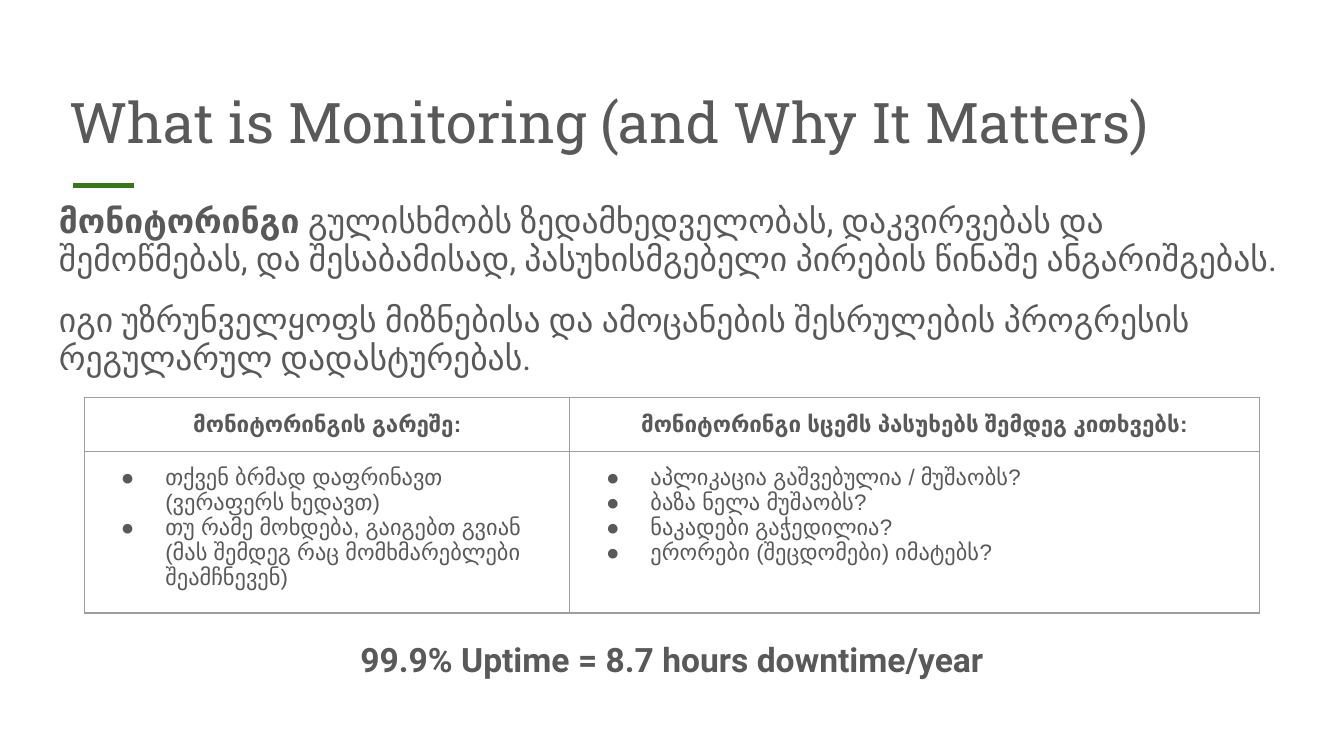
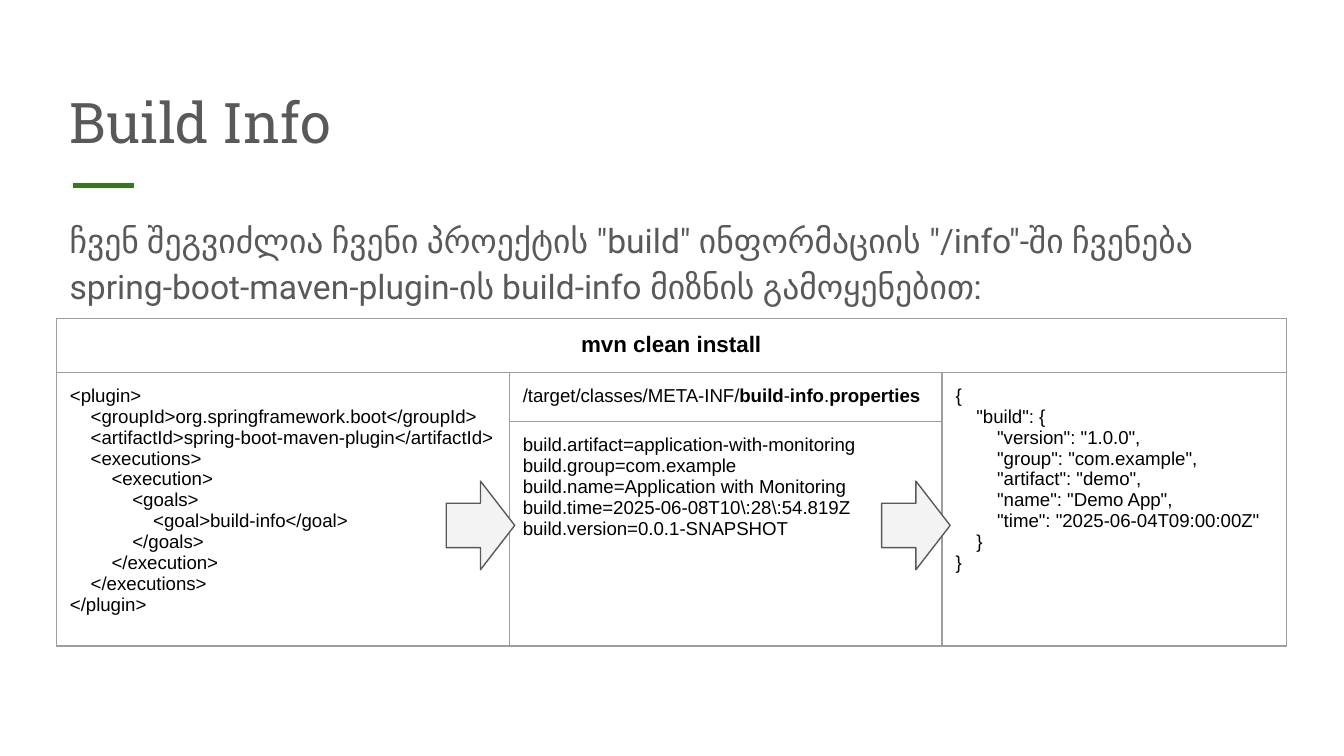
from lxml.etree import SubElement
from pptx import Presentation
from pptx.dml.color import RGBColor
from pptx.enum.shapes import MSO_CONNECTOR, MSO_SHAPE
from pptx.enum.text import MSO_ANCHOR, PP_ALIGN
from pptx.oxml.ns import qn
from pptx.util import Inches, Pt

# Shared look
GRAY, GREEN, BLACK = "595959", "38761D", "000000"
EDGE, PALE = "9E9E9E", "F3F3F3"
MID = PP_ALIGN.CENTER
rgb = RGBColor.from_string


def write(frame, text, font="Arial", size=12, color=GRAY, align=None,
          space=None, before=0, bullet=None, anchor=MSO_ANCHOR.TOP):
    """One paragraph per line; **bold** marks; leading spaces become an indent."""
    frame.word_wrap = True
    frame.vertical_anchor = anchor
    frame.margin_left = frame.margin_right = Inches(0.1)
    frame.margin_top = frame.margin_bottom = Inches(0.1)
    for i, line in enumerate(text.strip().split("\n")):
        par = frame.add_paragraph() if i else frame.paragraphs[0]
        par.alignment = align
        if space:
            par.line_spacing = space
        par.space_before = Pt(before if i else 0)
        props = par._p.get_or_add_pPr()
        body = line.lstrip()
        depth = (len(line) - len(body)) / 4
        if depth:
            props.set("marL", str(Inches(0.31 / 2 * depth)))
        if bullet:
            props.set("marL", str(Inches(0.5)))
            props.set("indent", str(Inches(-0.33)))
            tint = SubElement(props, qn("a:buClr"))
            SubElement(tint, qn("a:srgbClr"), val=color)
            SubElement(props, qn("a:buSzPts"), val=str(size * 100))
            SubElement(props, qn("a:buFont"), typeface=font)
            SubElement(props, qn("a:buChar"), char=bullet)
        for j, part in enumerate(body.split("**")):
            if part:
                run = par.add_run()
                run.text = part
                run.font.name, run.font.size = font, Pt(size)
                run.font.bold = j % 2 == 1
                run.font.color.rgb = rgb(color)


def grid(slide, left, top, cols, rows):
    """Plain table with thin gray borders on every cell."""
    frame = slide.shapes.add_table(len(rows), len(cols), Inches(left), Inches(top),
                                   Inches(sum(cols)), Inches(sum(rows)))
    table = frame.table
    table.first_row = table.horz_banding = False
    for col, width in zip(table.columns, cols):
        col.width = Inches(width)
    for row, height in zip(table.rows, rows):
        row.height = Inches(height)
    for cell in table.iter_cells():
        props = cell._tc.get_or_add_tcPr()
        for side in ("lnL", "lnR", "lnT", "lnB"):
            edge = SubElement(props, qn("a:" + side), w=str(Pt(0.75)))
            fill = SubElement(edge, qn("a:solidFill"))
            SubElement(fill, qn("a:srgbClr"), val=EDGE)
        cell.fill.background()
        cell.margin_left = cell.margin_right = Inches(0.1)
        cell.margin_top = cell.margin_bottom = Inches(0.1)
    return table


# A 16:9 deck
deck = Presentation()
deck.slide_width, deck.slide_height = Inches(10), Inches(10 * 9 / 16)

# Both slides: green rule, title, body text
INTRO = """
**მონიტორინგი** გულისხმობს ზედამხედველობას, დაკვირვებას და შემოწმებას, და შესაბამისად, პასუხისმგებელი პირების წინაშე ანგარიშგებას.
იგი უზრუნველყოფს მიზნებისა და ამოცანების შესრულების პროგრესის რეგულარულ დადასტურებას.
"""
BUILD = """
ჩვენ შეგვიძლია ჩვენი პროექტის "build" ინფორმაციის "/info"-ში ჩვენება spring-boot-maven-plugin-ის build-info მიზნის გამოყენებით:
"""
pages = [
    ("What is Monitoring (and Why It Matters)", INTRO, (0.34, 1.41, 9.32, 1.5), 0.95),
    ("Build Info", BUILD, (0.42, 1.49, 9.15, 0.88), 1.15),
]
for title, text, place, space in pages:
    slide = deck.slides.add_slide(deck.slide_layouts[6])
    rule = slide.shapes.add_connector(MSO_CONNECTOR.STRAIGHT, Inches(0.54), Inches(1.38),
                                      Inches(1), Inches(1.38))
    rule.line.color.rgb = rgb(GREEN)
    rule.line.width = Pt(3)
    SubElement(rule._element.spPr, qn("a:effectLst"))
    head = slide.shapes.add_textbox(Inches(0.42), Inches(0.5), Inches(9.15), Inches(0.75))
    write(head.text_frame, title, font="Roboto Slab", size=30, anchor=MSO_ANCHOR.BOTTOM)
    body = slide.shapes.add_textbox(*map(Inches, place))
    write(body.text_frame, text, font="Roboto", size=18, space=space, before=12)

first, second = deck.slides

# Slide 1: comparison table
table = grid(first, 0.63, 2.96, [3.61, 5.13], [0.27, 0.81])
sides = [
    ("მონიტორინგის გარეშე:", """
თქვენ ბრმად დაფრინავთ (ვერაფერს ხედავთ)
თუ რამე მოხდება, გაიგებთ გვიან (მას შემდეგ რაც მომხმარებლები შეამჩნევენ)
"""),
    ("მონიტორინგი სცემს პასუხებს შემდეგ კითხვებს:", """
აპლიკაცია გაშვებულია / მუშაობს?
ბაზა ნელა მუშაობს?
ნაკადები გაჭედილია?
ერორები (შეცდომები) იმატებს?
"""),
]
for col, (name, points) in enumerate(sides):
    top = table.cell(0, col)
    write(top.text_frame, f"**{name}**", align=MID)
    top.vertical_anchor = MSO_ANCHOR.MIDDLE
    write(table.cell(1, col).text_frame, points, bullet="●")

# Slide 1: closing line
note = first.shapes.add_textbox(Inches(0.34), Inches(4.68), Inches(9.32), Inches(0.5))
write(note.text_frame, "**99.9% Uptime = 8.7 hours downtime/year**",
      font="Roboto", size=18, align=MID, space=0.95)

# Slide 2: build table
PLUGIN = """
<plugin>
    <groupId>org.springframework.boot</groupId>
    <artifactId>spring-boot-maven-plugin</artifactId>
    <executions>
        <execution>
            <goals>
                <goal>build-info</goal>
            </goals>
        </execution>
    </executions>
</plugin>
"""
PROPS = r"""
build.artifact=application-with-monitoring
build.group=com.example
build.name=Application with Monitoring
build.time=2025-06-08T10\:28\:54.819Z
build.version=0.0.1-SNAPSHOT
"""
JSON = """
{
    "build": {
        "version": "1.0.0",
        "group": "com.example",
        "artifact": "demo",
        "name": "Demo App",
        "time": "2025-06-04T09:00:00Z"
    }
}
"""
table = grid(second, 0.42, 2.37, [3.37, 3.22, 2.56], [0.17, 0.17, 0.87])
table.cell(0, 0).merge(table.cell(0, 2))
for col in (0, 2):
    table.cell(1, col).merge(table.cell(2, col))
write(table.cell(0, 0).text_frame, "**mvn clean install**", color=BLACK, align=MID)
cells = [
    (1, 0, PLUGIN),
    (1, 1, "/target/classes/META-INF/**build**-**info**.**properties**"),
    (1, 2, JSON),
    (2, 1, PROPS),
]
for row, col, text in cells:
    write(table.cell(row, col).text_frame, text, size=10, color=BLACK)

# Slide 2: arrows between columns
for left in (3.32, 6.56):
    arrow = second.shapes.add_shape(MSO_SHAPE.RIGHT_ARROW, Inches(left), Inches(3.58),
                                    Inches(0.51), Inches(0.66))
    arrow.shadow.inherit = False
    arrow.fill.solid()
    arrow.fill.fore_color.rgb = rgb(PALE)
    arrow.line.color.rgb = rgb(GRAY)
    arrow.line.width = Pt(0.75)

deck.save("out.pptx")
